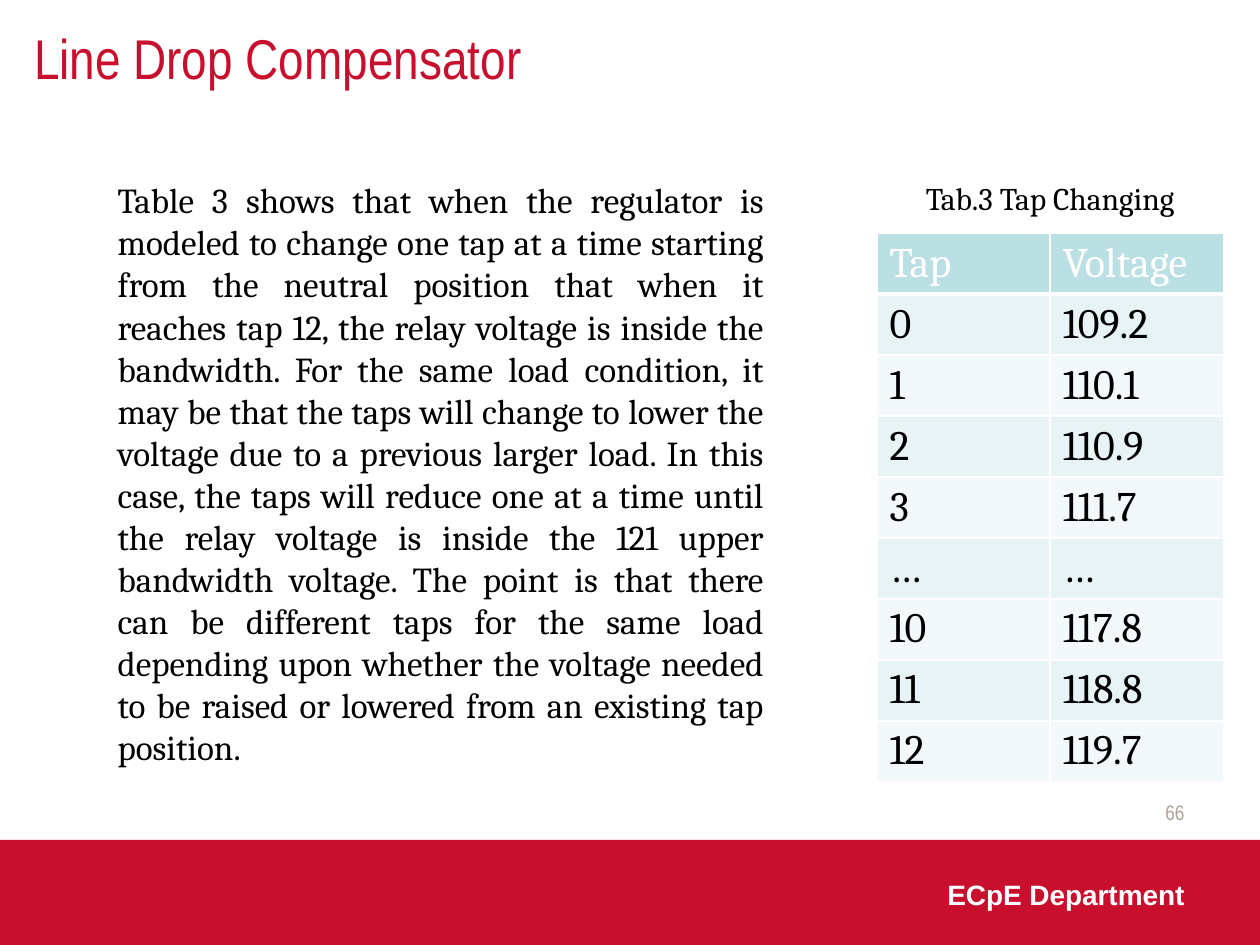
import pptx
import pptx.util
import pptx.dml.color
import pptx.enum.shapes
import pptx.enum.text
import pptx.oxml
import pptx.oxml.ns
from dataclasses import dataclass

ALIGN = pptx.enum.text.PP_ALIGN
ANCHOR = pptx.enum.text.MSO_ANCHOR
WIDTH, HEIGHT = 10, 7.5


@dataclass(frozen=True)
class Theme:
    red: str = "C8102E"
    white: str = "FFFFFF"
    black: str = "000000"
    grey: str = "ACA39A"
    header: str = "BBE0E3"
    bands: tuple = ("E7F3F4", "F3F9FA")
    narrow: str = "Arial Narrow"
    sans: str = "Arial"
    serif: str = "Cambria"
    title_size: int = 32
    table_size: int = 24
    body_size: int = 20
    caption_size: int = 18
    footer_size: int = 16
    number_size: int = 12


THEME = Theme()

BODY = (
    "Table 3 shows that when the regulator is modeled to change one tap at a time "
    "starting from the neutral position that when it reaches tap 12, the relay voltage "
    "is inside the bandwidth. For the same load condition, it may be that the taps will "
    "change to lower the voltage due to a previous larger load. In this case, the taps "
    "will reduce one at a time until the relay voltage is inside the 121 upper bandwidth "
    "voltage. The point is that there can be different taps for the same load depending "
    "upon whether the voltage needed to be raised or lowered from an existing tap position."
)
TAPS = [
    ("Tap", "Voltage"), ("0", "109.2"), ("1", "110.1"), ("2", "110.9"), ("3", "111.7"),
    ("…", "…"), ("10", "117.8"), ("11", "118.8"), ("12", "119.7"),
]


def inches(*values):
    return [pptx.util.Inches(value) for value in values]


def color(code):
    return pptx.dml.color.RGBColor.from_string(code)


def place(shape, box):
    for name, value in zip(("left", "top", "width", "height"), inches(*box)):
        setattr(shape, name, value)


def write(frame, text, font, size, ink, align=ALIGN.LEFT, bold=False):
    para = frame.paragraphs[0]
    span = para.add_run()
    span.text = text
    para.alignment = align
    formats = {"name": font, "size": pptx.util.Pt(size), "bold": bold}
    for name, value in formats.items():
        setattr(span.font, name, value)
    span.font.color.rgb = color(ink)
    return para


def set_frame(frame, anchor=ANCHOR.TOP):
    formats = {"word_wrap": True, "auto_size": pptx.enum.text.MSO_AUTO_SIZE.NONE,
               "vertical_anchor": anchor}
    for name, value in formats.items():
        setattr(frame, name, value)


def add_label(page, box, text, *style, anchor=ANCHOR.TOP, **options):
    frame = page.shapes.add_textbox(*inches(*box)).text_frame
    set_frame(frame, anchor)
    write(frame, text, *style, **options)


def add_title(page, box):
    title = page.shapes.title
    place(title, box)
    set_frame(title.text_frame)
    write(title.text_frame, "Line Drop Compensator",
          THEME.narrow, THEME.title_size, THEME.red)


def add_body(page, box):
    body = page.placeholders[1]
    place(body, box)
    set_frame(body.text_frame)
    para = write(body.text_frame, BODY, THEME.serif, THEME.body_size,
                 THEME.black, align=ALIGN.JUSTIFY)
    para.space_before = pptx.util.Pt(0)
    # Plain paragraph: no bullet and no hanging indent
    settings = para._p.get_or_add_pPr()
    settings.set("marL", "0")
    settings.set("indent", "0")
    settings.append(pptx.oxml.parse_xml(
        f'<a:buNone {pptx.oxml.ns.nsdecls("a")}/>'))


def add_borders(cell, bottom):
    settings = cell._tc.get_or_add_tcPr()
    for side, points in {"L": 1, "R": 1, "T": 1, "B": bottom}.items():
        settings.append(pptx.oxml.parse_xml(
            f'<a:ln{side} {pptx.oxml.ns.nsdecls("a")} w="{pptx.util.Pt(points)}">'
            f'<a:solidFill><a:srgbClr val="{THEME.white}"/></a:solidFill></a:ln{side}>'))


def add_tap_table(page, box):
    left, top, width, height = box
    # Caption, centred over the table
    caption_width = 3.5
    add_label(page, (left + (width - caption_width) / 2, top, caption_width, 0.4),
              "Tab.3 Tap Changing", THEME.serif, THEME.caption_size, THEME.black,
              align=ALIGN.CENTER)
    # Header row and banded values
    gap = 0.48
    table = page.shapes.add_table(
        len(TAPS), len(TAPS[0]), *inches(left, top + gap, width, height - gap)).table
    for r, values in enumerate(TAPS):
        for c, value in enumerate(values):
            cell = table.cell(r, c)
            add_borders(cell, bottom=1 if r else 3)
            cell.fill.solid()
            cell.fill.fore_color.rgb = color(THEME.bands[(r - 1) % 2] if r else THEME.header)
            write(cell.text_frame, value, THEME.serif, THEME.table_size,
                  THEME.black if r else THEME.white)


def add_footer(page, box):
    left, top, width, height = box
    band = page.shapes.add_shape(pptx.enum.shapes.MSO_SHAPE.RECTANGLE, *inches(*box))
    band.shadow.inherit = False
    band.fill.solid()
    band.fill.fore_color.rgb = color(THEME.red)
    band.line.fill.background()
    add_label(page, (left + 0.742 * width, top + 0.3 * height, 2.67, 0.5 * height),
              "ECpE Department", THEME.sans, THEME.footer_size, THEME.white, bold=True)
    # Page number, just above the band
    add_label(page, (left + 0.717 * width, top - 0.42, 2.33, 0.4), "66",
              THEME.narrow, THEME.number_size, THEME.grey,
              align=ALIGN.RIGHT, anchor=ANCHOR.MIDDLE)


def main():
    deck = pptx.Presentation()
    deck.slide_width, deck.slide_height = inches(WIDTH, HEIGHT)
    page = deck.slides.add_slide(deck.slide_layouts[1])
    band_height = HEIGHT / 9
    add_footer(page, (0, HEIGHT - band_height, WIDTH, band_height))
    add_title(page, (0.17, 0.14, 4.96, 0.64))
    add_body(page, (WIDTH / 12, 1.37, WIDTH * 0.533, 4.48))
    add_tap_table(page, (6.96, 1.37, 2.75, 4.13))
    deck.save("out.pptx")


if __name__ == "__main__":
    main()
